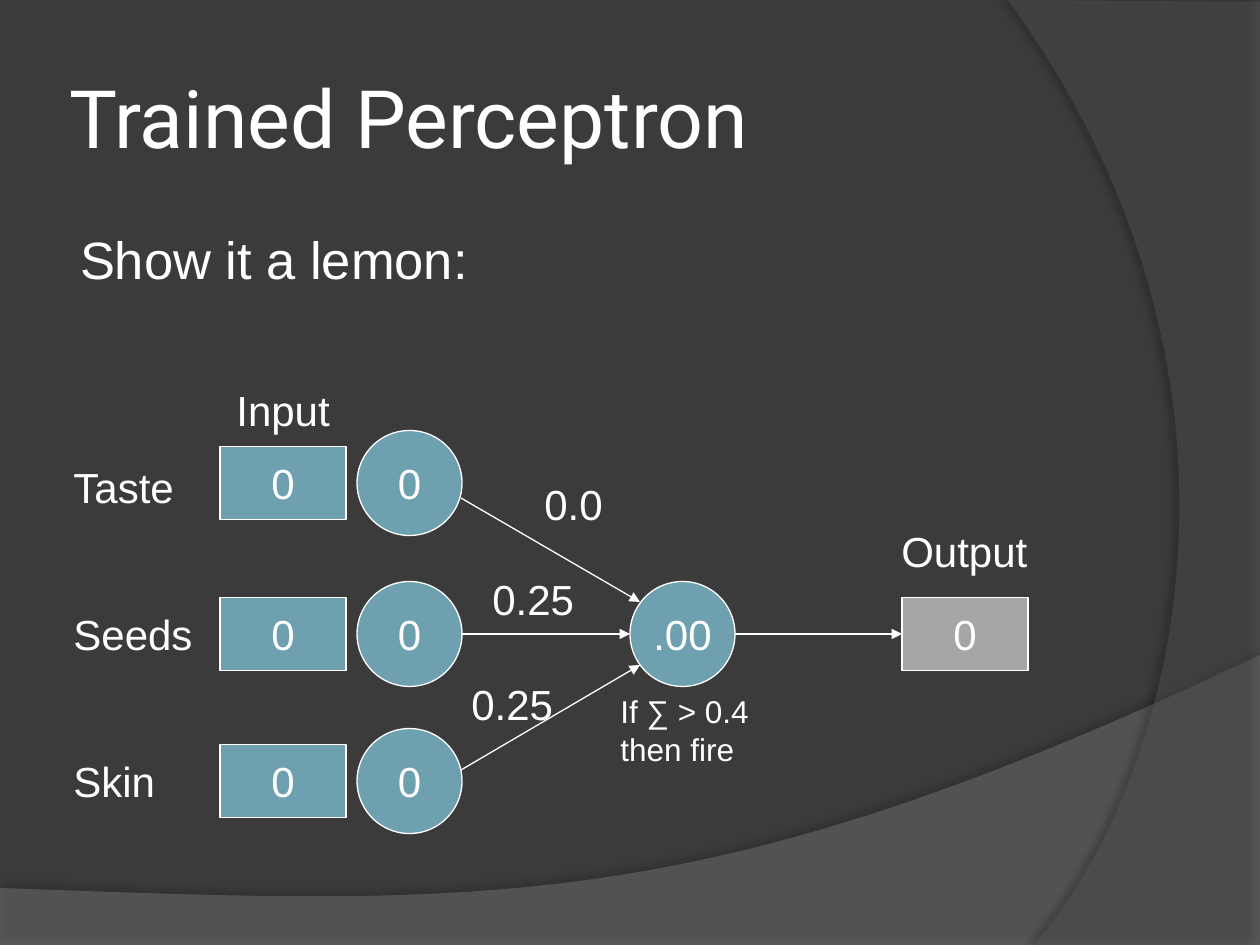
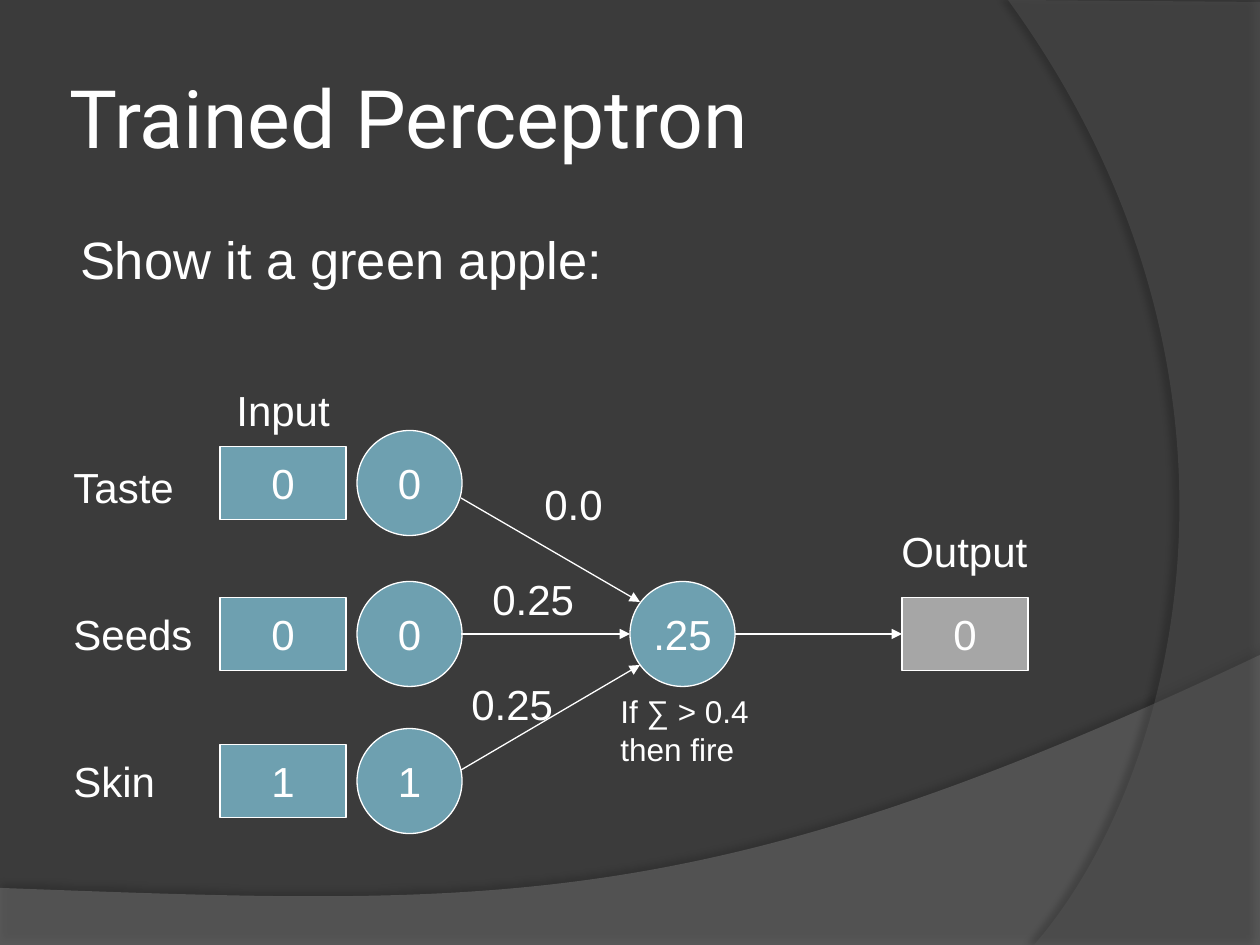
from lxml import etree
from pptx import Presentation
from pptx.dml.color import RGBColor
from pptx.enum.shapes import MSO_CONNECTOR, MSO_SHAPE
from pptx.enum.text import MSO_ANCHOR, MSO_AUTO_SIZE, PP_ALIGN
from pptx.oxml import parse_xml
from pptx.oxml.ns import nsdecls, qn
from pptx.util import Pt

SCALE = 914400 / 126  # EMU in one px
TITLE_ONLY = 5
STRAIGHT = MSO_CONNECTOR.STRAIGHT
RECTANGLE, OVAL = MSO_SHAPE.RECTANGLE, MSO_SHAPE.OVAL
LEFT, CENTER = PP_ALIGN.LEFT, PP_ALIGN.CENTER
TOP, MIDDLE = MSO_ANCHOR.TOP, MSO_ANCHOR.MIDDLE
NO_FIT, GROW = MSO_AUTO_SIZE.NONE, MSO_AUTO_SIZE.SHAPE_TO_FIT_TEXT
RECTANGLE_LEFT = 1

COLORS = {
    name: RGBColor.from_string(value)
    for name, value in {
        "background": "3B3B3B",
        "text": "FFFFFF",
        "node": "6EA0B0",
        "output": "A6A6A6",
        "bottom band": "7C7C7C",
        "right band": "595959",
    }.items()
}

# Colour, opacity, corner points, Bezier curve, shadow (opacity, distance pt, angle)
BANDS = [
    ("bottom band", 45, [(0, 945), (1260, 945)],
     [(1260, 655), (704, 919), (493, 906), (0, 888)], (35, 3.5, 270)),
    ("right band", 40, [(1260, 2), (1260, 945)],
     [(1034, 945), (1178, 780), (1283, 378), (1008, 0)], (45, 4, 180)),
]

EXAMPLES = [
    ("Show it a lemon:", ("0", "0", "0"), ".00", "0"),
    ("Show it a green apple:", ("0", "0", "1"), ".25", "0"),
]

# Label, label width, label top, centre line of the row
INPUT_ROWS = [
    ("Taste", 130, 455, 483),
    ("Seeds", 146, 602, 634),
    ("Skin", 108, 749, 781),
]
CIRCLE = 105
BOX_WIDTH, BOX_HEIGHT = 126, 73
BOX_LEFT, INPUT_LEFT, SUM_LEFT, OUTPUT_LEFT = 220, 357, 630, 902
MIDDLE_ROW = 634

DIAGRAM_LABELS = [
    ("If ∑ > 0.4\nthen fire", (608, 686, 174, 88), 18),
    ("0.0", (532, 472, 86, 63), 24),
    ("0.25", (480, 567, 108, 63), 24),
    ("0.25", (459, 672, 108, 63), 24),
    ("Input", (224, 378, 121, 63), 24),
    ("Output", (889, 519, 153, 63), 24),
]
ARROWS = [
    (461, 498, 640, 602),
    (461, 770, 640, 665),
    (461, MIDDLE_ROW, SUM_LEFT, MIDDLE_ROW),
    (SUM_LEFT + CIRCLE, MIDDLE_ROW, OUTPUT_LEFT, MIDDLE_ROW),
]


def px(*lengths):
    """Turn px into EMU."""
    return [round(length * SCALE) for length in lengths]


def write_text(shape, text, size, font="Arial", alignment=LEFT, **frame_values):
    """Fill a shape with text; frame_values are set on its text frame."""
    frame = shape.text_frame
    frame.text = text
    for name, value in frame_values.items():
        setattr(frame, name, value)
    for paragraph in frame.paragraphs:
        paragraph.alignment = alignment
        for name, value in {"name": font, "size": Pt(size)}.items():
            setattr(paragraph.font, name, value)
        paragraph.font.color.rgb = COLORS["text"]


presentation = Presentation()
presentation.slide_width, presentation.slide_height = px(1260, 945)
background = presentation.slide_master.background.fill
background.solid()
background.fore_color.rgb = COLORS["background"]
layout = presentation.slide_layouts[TITLE_ONLY]
slides = [presentation.slides.add_slide(layout) for _ in EXAMPLES]

# The bands are drawn on a slide, then moved to the shared layout.
for band_id, (color, opacity, corners, curve, shadow) in enumerate(BANDS, 101):
    points = [*corners, curve[0], curve[-1]]
    builder = slides[0].shapes.build_freeform(*points[0], scale=SCALE)
    builder.add_line_segments(points[1:], close=True)
    band = builder.convert_to_shape()
    properties = band.element.spPr

    # The last straight side becomes the curve.
    left, top = (min(axis) for axis in zip(*points))
    last_side = properties.findall(".//" + qn("a:lnTo"))[-1]
    bezier = etree.Element(qn("a:cubicBezTo"))
    for x, y in curve[1:]:
        etree.SubElement(bezier, qn("a:pt"), x=str(x - left), y=str(y - top))
    last_side.getparent().replace(last_side, bezier)

    band.fill.solid()
    band.fill.fore_color.rgb = COLORS[color]
    band.line.fill.background()
    fill_color = properties.find(".//" + qn("a:srgbClr"))
    etree.SubElement(fill_color, qn("a:alpha"), val=str(opacity * 1000))
    shadow_opacity, distance, angle = shadow
    properties.append(parse_xml(
        f'<a:effectLst {nsdecls("a")}><a:outerShdw blurRad="{Pt(4)}" '
        f'dist="{Pt(distance)}" dir="{angle * 60000}" rotWithShape="0">'
        f'<a:srgbClr val="000000"><a:alpha val="{shadow_opacity * 1000}"/>'
        '</a:srgbClr></a:outerShdw></a:effectLst>'))
    band.element.find(".//" + qn("p:cNvPr")).set("id", str(band_id))
    layout.shapes.element.append(band.element)

for slide, (prompt, inputs, total, output) in zip(slides, EXAMPLES):
    shapes = slide.shapes

    title = shapes.title
    title.left, title.top, title.width, title.height = px(63, 37, 1029, 158)
    inset = px(6)[0]
    write_text(title, "Trained Perceptron", 46, "Roboto", word_wrap=True,
               auto_size=NO_FIT, vertical_anchor=MIDDLE, margin_left=inset,
               margin_right=inset, margin_top=inset, margin_bottom=inset)

    prompt_box = shapes.add_textbox(*px(63, 220, 1029, 624))
    margin_left, margin_top = px(17, 7)
    write_text(prompt_box, prompt, 30, word_wrap=True, auto_size=NO_FIT,
               vertical_anchor=TOP, margin_left=margin_left, margin_top=margin_top)

    # Kind, left, centre line, width, height, colour, text
    nodes = [(OVAL, SUM_LEFT, MIDDLE_ROW, CIRCLE, CIRCLE, "node", total)]
    labels = list(DIAGRAM_LABELS)
    for (label, width, top, centre), value in zip(INPUT_ROWS, inputs):
        nodes += [
            (OVAL, INPUT_LEFT, centre, CIRCLE, CIRCLE, "node", value),
            (RECTANGLE, BOX_LEFT, centre, BOX_WIDTH, BOX_HEIGHT, "node", value),
        ]
        labels.append((label, (61, top, width, 63), 24))
    nodes.append((RECTANGLE, OUTPUT_LEFT, MIDDLE_ROW, BOX_WIDTH, BOX_HEIGHT,
                  "output", output))

    for kind, left, centre, width, height, color, text in nodes:
        node = shapes.add_shape(kind, *px(left, centre - height / 2, width, height))
        node.shadow.inherit = False
        node.fill.solid()
        node.fill.fore_color.rgb = COLORS[color]
        node.line.color.rgb = COLORS["text"]
        node.line.width = Pt(0.75)
        write_text(node, text, 24, alignment=CENTER, word_wrap=False,
                   vertical_anchor=MIDDLE)
    output_box = node

    for ends in ARROWS:
        arrow = shapes.add_connector(STRAIGHT, *px(*ends))
        arrow.line.color.rgb = COLORS["text"]
        arrow.line.width = Pt(0.75)
        line = arrow.element.spPr.find(qn("a:ln"))
        etree.SubElement(line, qn("a:tailEnd"), type="triangle")
        etree.SubElement(arrow.element.spPr, qn("a:effectLst"))
    arrow.end_connect(output_box, RECTANGLE_LEFT)

    for text, box, size in labels:
        write_text(shapes.add_textbox(*px(*box)), text, size,
                   word_wrap=False, auto_size=GROW)

presentation.save("out.pptx")
